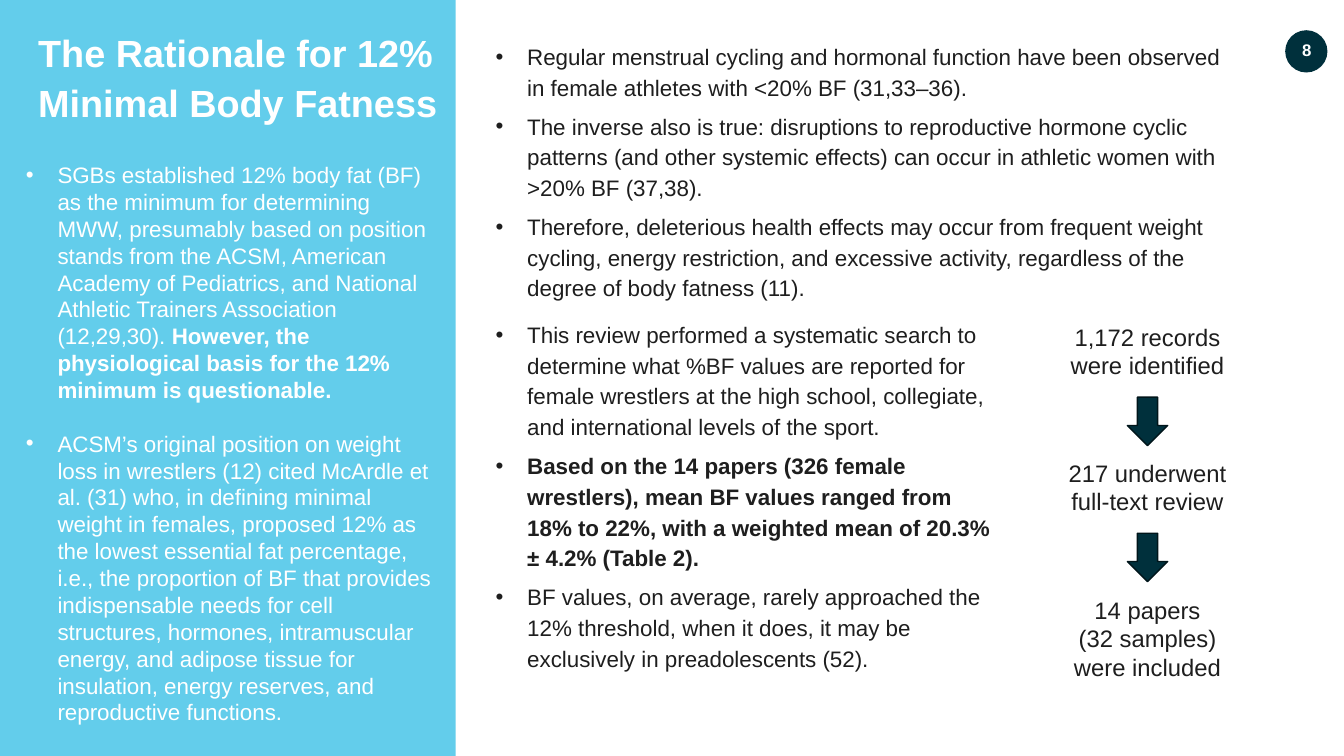
from pptx import Presentation
from pptx.dml.color import RGBColor
from pptx.enum.shapes import MSO_SHAPE as SHAPE
from pptx.enum.text import PP_ALIGN as ALIGN
from pptx.oxml.ns import qn
from pptx.util import Pt
from lxml.etree import SubElement

WHITE, INK, NAVY, NAVY_EDGE, SKY = "FFFFFF", "1E1E1E", "00303C", "00151A", "53C8E9"
FONT = "Arial"
INDENT = 22.5

TITLE = [[("The Rationale for 12% Minimal Body Fatness", True)]]
PAGE_NUMBER = [[("8", True)]]
BACKGROUND = [
    [("SGBs established 12% body fat (BF) as the minimum for determining MWW, presumably based on "
      "position stands from the ACSM, American Academy of Pediatrics, and National Athletic Trainers "
      "Association (12,29,30). ", False),
     ("However, the physiological basis for the 12% minimum is questionable.", True)],
    [("ACSM’s original position on weight loss in wrestlers (12) cited McArdle et al. (31) who, in "
      "defining minimal weight in females, proposed 12% as the lowest essential fat percentage, i.e., "
      "the proportion of BF that provides indispensable needs for cell structures, hormones, "
      "intramuscular energy, and adipose tissue for insulation, energy reserves, and reproductive "
      "functions.", False)],
]
EVIDENCE = [
    [("Regular menstrual cycling and hormonal function have been observed in female athletes with "
      "<20% BF (31,33–36).", False)],
    [("The inverse also is true: disruptions to reproductive hormone cyclic patterns (and other "
      "systemic effects) can occur in athletic women with >20% BF (37,38).", False)],
    [("Therefore, deleterious health effects may occur from frequent weight cycling, energy "
      "restriction, and excessive activity, regardless of the degree of body fatness (11).", False)],
]
REVIEW = [
    [("This review performed a systematic search to determine what %BF values are reported for female "
      "wrestlers at the high school, collegiate, and international levels of the sport.", False)],
    [("Based on the 14 papers (326 female wrestlers), mean BF values ranged from 18% to 22%, with a "
      "weighted mean of 20.3% ± 4.2% (Table 2).", True)],
    [("BF values, on average, rarely approached the 12% threshold, when it does, it may be "
      "exclusively in preadolescents (52).", False)],
]
SCREENING = [
    (226.8, 48.2, [[("1,172 records were identified", False)]]),
    (324, 48.2, [[("217 underwent full-text review", False)]]),
    (421.9, 69.1, [[("14 papers", False)], [("(32 samples) were included", False)]]),
]
FLOW_LEFT, FLOW_WIDTH = 745.2, 149
ARROW_WIDTH, ARROW_HEIGHT, ARROW_GAP = 28.8, 34.6, 8.7

deck = Presentation()
deck.slide_width, deck.slide_height = Pt(960), Pt(540)
slide = deck.slides.add_slide(deck.slide_layouts[6])


def rgb(value):
    return RGBColor.from_string(value)


def add_figure(kind, box, fill, edge=None):
    figure = slide.shapes.add_shape(kind, *map(Pt, box))
    figure.shadow.inherit = False
    figure.fill.solid()
    figure.fill.fore_color.rgb = rgb(fill)
    if edge:
        figure.line.color.rgb = rgb(edge)
        figure.line.width = Pt(1)
    else:
        figure.line.fill.background()
    return figure


def add_bullet(paragraph):
    properties = paragraph._p.get_or_add_pPr()
    properties.set("marL", str(Pt(INDENT)))
    properties.set("indent", str(-Pt(INDENT)))
    SubElement(properties, qn("a:buFont"), typeface=FONT)
    SubElement(properties, qn("a:buChar"), char="•")


def add_text(box, paragraphs, size, color, pitch=1.2, after=0, align=ALIGN.LEFT, bullets=False):
    frame = slide.shapes.add_textbox(*map(Pt, box)).text_frame
    frame.word_wrap = True
    for number, runs in enumerate(paragraphs):
        paragraph = frame.add_paragraph() if number else frame.paragraphs[0]
        if bullets:
            add_bullet(paragraph)
        paragraph.alignment = align
        paragraph.line_spacing = Pt(round(size * pitch, 1))
        paragraph.space_after = Pt(after)
        for words, bold in runs:
            run = paragraph.add_run()
            run.text = words
            run.font.name = FONT
            run.font.size = Pt(size)
            run.font.bold = bold
            run.font.color.rgb = rgb(color)


add_figure(SHAPE.OVAL, (918, 21.6, 30.2, 30.2), NAVY)
panel = add_figure(SHAPE.RECTANGLE, (0, 0, 325.4, 540), SKY)
panel_color = panel.fill._xPr.find(qn("a:solidFill"))[0]
SubElement(panel_color, qn("a:alpha"), val="90000")

add_text((20.2, 14.4, 309.6, 76.3), TITLE, 27, WHITE, pitch=1.32)
add_text((910.8, 25.2, 45.4, 28.8), PAGE_NUMBER, 12, WHITE, align=ALIGN.CENTER)
add_text((11.5, 111.6, 309.6, 414.7), BACKGROUND, 16, WHITE, after=19.2, bullets=True)
add_text((347, 24.5, 548, 194.4), EVIDENCE, 16, INK, pitch=1.37, after=6, bullets=True)
add_text((347, 223.2, 368.6, 260.6), REVIEW, 16, INK, pitch=1.37, after=6, bullets=True)

arrow_left = FLOW_LEFT + (FLOW_WIDTH - ARROW_WIDTH) / 2
for step, (top, height, lines) in enumerate(SCREENING):
    add_text((FLOW_LEFT, top, FLOW_WIDTH, height), lines, 17, INK, align=ALIGN.CENTER)
    if step < len(SCREENING) - 1:
        arrow_top = top + height + ARROW_GAP
        add_figure(SHAPE.DOWN_ARROW, (arrow_left, arrow_top, ARROW_WIDTH, ARROW_HEIGHT), NAVY, NAVY_EDGE)

deck.save("out.pptx")
